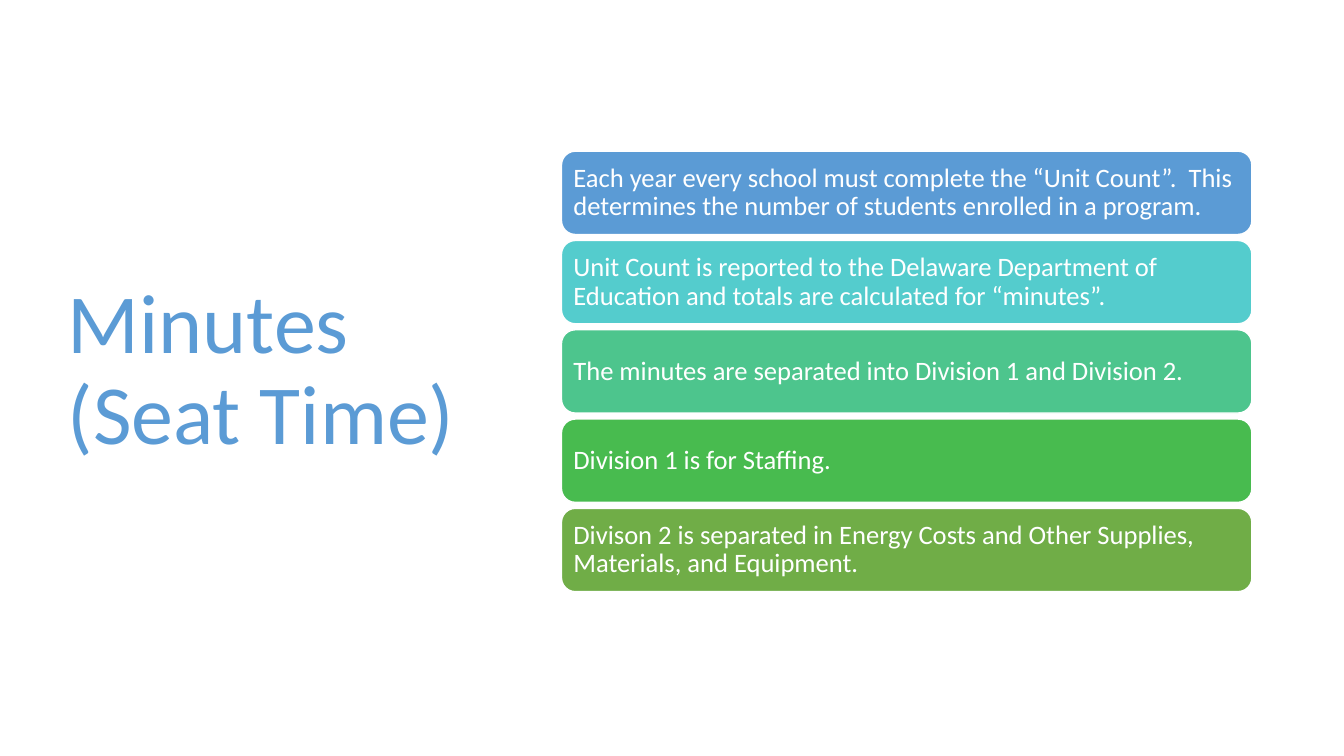
from pptx import Presentation
from pptx.dml.color import RGBColor
from pptx.enum.shapes import MSO_SHAPE as Shape
from pptx.enum.text import MSO_ANCHOR as Anchor, MSO_AUTO_SIZE as AutoSize, PP_ALIGN as Align
from pptx.util import Cm, Pt

COLORS = {
    "white": "FFFFFF",
    "blue": "5B9BD5",
    "turquoise": "54CCCD",
    "mint": "4DC58D",
    "green": "48BB4F",
    "olive": "70AD47",
}

FACTS = [
    ("blue", "Each year every school must complete the “Unit Count”.  This determines the number of students enrolled in a program."),
    ("turquoise", "Unit Count is reported to the Delaware Department of Education and totals are calculated for “minutes”."),
    ("mint", "The minutes are separated into Division 1 and Division 2."),
    ("green", "Division 1 is for Staffing."),
    ("olive", "Divison 2 is separated in Energy Costs and Other Supplies, Materials, and Equipment."),
]

BAR_LEFT, BAR_TOP = 14.15, 3.81
BAR_WIDTH, BAR_HEIGHT = 17.4, 2.1
BAR_PITCH = 2.25


class SlideBuilder:
    font = "Calibri"
    line_spacing = 0.9
    bar_inset = Cm(0.2)

    def __init__(self, slide):
        self.slide = slide

    def color(self, name):
        return RGBColor.from_string(COLORS[name])

    def add_text(self, frame, text, size, color):
        frame.word_wrap = True
        frame.auto_size = AutoSize.NONE
        frame.vertical_anchor = Anchor.MIDDLE
        paragraph = frame.paragraphs[0]
        paragraph.alignment = Align.LEFT
        paragraph.line_spacing = self.line_spacing
        run = paragraph.add_run()
        run.text = text
        run.font.name = self.font
        run.font.size = Pt(size)
        run.font.color.rgb = self.color(color)

    def title(self, text, left, top, width, height):
        heading = self.slide.shapes.title
        heading.left, heading.top = Cm(left), Cm(top)
        heading.width, heading.height = Cm(width), Cm(height)
        self.add_text(heading.text_frame, text, 60, "blue")

    def bar(self, text, fill, left, top, width, height):
        bar = self.slide.shapes.add_shape(
            Shape.ROUNDED_RECTANGLE, Cm(left), Cm(top), Cm(width), Cm(height))
        bar.shadow.inherit = False
        bar.fill.solid()
        bar.fill.fore_color.rgb = self.color(fill)
        bar.line.color.rgb = self.color("white")
        bar.line.width = Pt(1)
        frame = bar.text_frame
        frame.margin_left = frame.margin_right = self.bar_inset
        frame.margin_top = frame.margin_bottom = self.bar_inset
        self.add_text(frame, text, 19, "white")


def main():
    deck = Presentation()
    deck.slide_width, deck.slide_height = Cm(33.87), Cm(19.05)
    builder = SlideBuilder(deck.slides.add_slide(deck.slide_layouts[5]))
    builder.title("Minutes (Seat Time)", 1.45, 1.73, 10.57, 15.29)
    for row, (fill, fact) in enumerate(FACTS):
        builder.bar(fact, fill, BAR_LEFT, BAR_TOP + row * BAR_PITCH, BAR_WIDTH, BAR_HEIGHT)
    deck.save("out.pptx")


if __name__ == "__main__":
    main()
